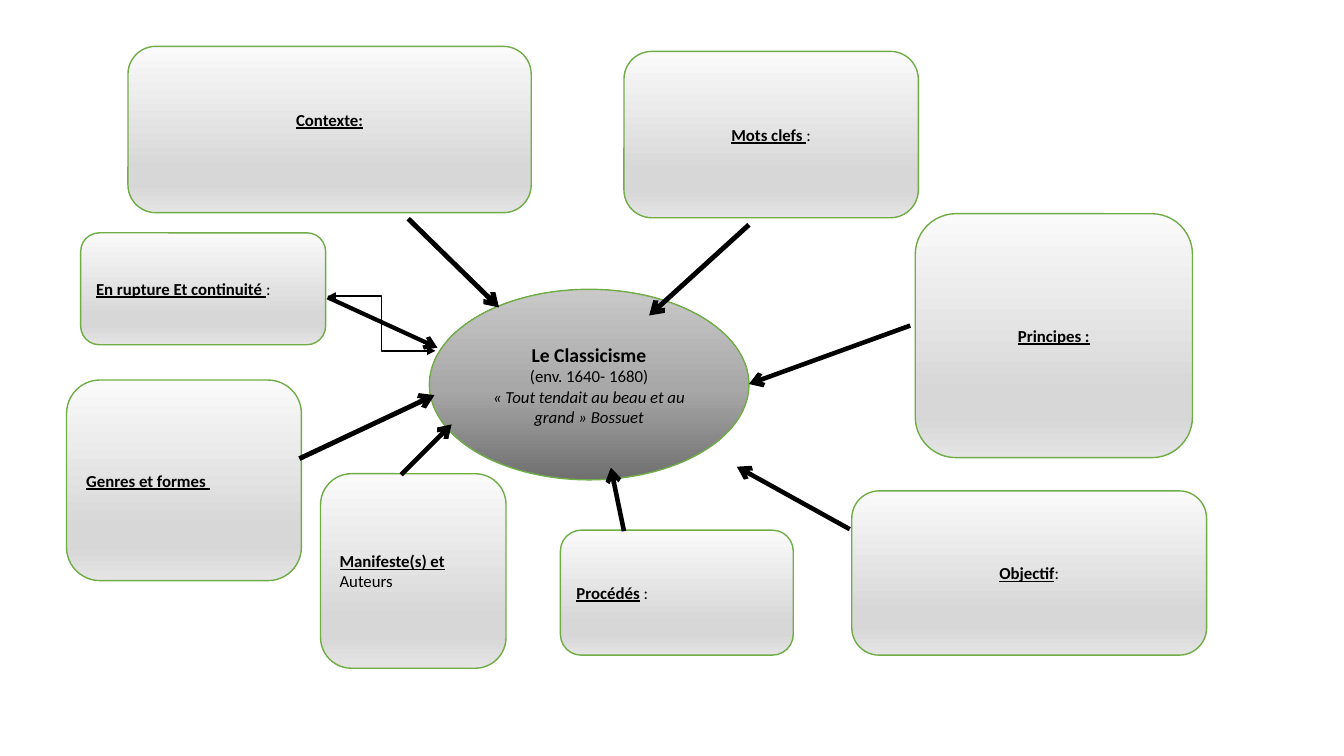
from dataclasses import dataclass

from lxml import etree
from pptx import Presentation
from pptx import util as u
from pptx.dml.color import RGBColor
from pptx.enum import shapes, text
from pptx.oxml.ns import qn


@dataclass(frozen=True)
class Theme:
    """Colours, type sizes and line widths of the slide."""
    font: str = "Calibri"
    ink: str = "000000"
    border: str = "70AD47"
    card: tuple = ((0, "FAFAFA"), (74, "D7D7D7"), (83, "D7D7D7"), (100, "E4E4E4"))
    hub: tuple = ((0, "6F6F6F"), (48, "A8A8A8"), (100, "C9C9C9"))
    title: int = 14
    body: int = 12
    border_width: int = 1


THEME = Theme()
COLUMNS, ROWS = 133.33, 75
LEFT, CENTER = text.PP_ALIGN.LEFT, text.PP_ALIGN.CENTER

HUB = (42.6, 28.7, 31.7, 18.9)
CARDS = [
    ((8, 23.1, 24.3, 11.1), LEFT, "En rupture Et continuité ", ":"),
    ((6.6, 37.7, 23.3, 19.9), LEFT, "Genres et formes ", ""),
    ((55.6, 52.6, 23.1, 12.4), LEFT, "Procédés", " :"),
    ((90.8, 21.2, 27.5, 24.2), CENTER, "Principes :", ""),
    ((12.7, 4.6, 40, 16.5), CENTER, "Contexte:", ""),
    ((61.9, 5.1, 29.2, 16.5), CENTER, "Mots clefs ", ":"),
    ((31.8, 47, 18.4, 19.3), LEFT, "Manifeste(s) et ", "Auteurs"),
    ((84.5, 48.7, 35.2, 16.3), CENTER, "Objectif", ":"),
]
RAISED_CARD, RAISED_INSET = "Contexte:", 0.25
ARROWS = [
    ((40.5, 21.7), (49.5, 30.5), 3.5),
    ((74.3, 22.3), (64.4, 31.3), 3.5),
    ((90.3, 32.3), (74.3, 38.1), 3.25),
    ((32.5, 29.5), (43.4, 34.5), 3),
    ((29.7, 45.5), (43.1, 39.2), 3.5),
    ((84.3, 52.5), (73.1, 46.3), 3.25),
    ((39.8, 47.1), (44.8, 42.1), 3.25),
    ((61.9, 52.7), (60.6, 46.4), 3.25),
]
ELBOW = ((32.5, 29.4), (43.2, 34.8), 1.25)


def place(area, column, row):
    """Turn a grid point into a position within the area."""
    left, top, width, height = area
    return left + round(width * column / COLUMNS), top + round(height * row / ROWS)


def add_node(page, area, kind, cell, stops, angle):
    """Add a gradient shape on a grid cell and return its text frame."""
    column, row, columns, rows = cell
    left, top = place(area, column, row)
    right, bottom = place(area, column + columns, row + rows)
    node = page.shapes.add_shape(kind, left, top, right - left, bottom - top)
    node.shadow.inherit = False
    node.line.color.rgb = RGBColor.from_string(THEME.border)
    node.line.width = u.Pt(THEME.border_width)
    node.fill.gradient()
    node.fill.gradient_angle = angle
    stop_list = node._element.spPr.find(qn("a:gradFill")).find(qn("a:gsLst"))
    for old_stop in list(stop_list):
        stop_list.remove(old_stop)
    for position, colour in stops:
        stop = etree.SubElement(stop_list, qn("a:gs"), pos=str(position * 1000))
        etree.SubElement(stop, qn("a:srgbClr"), val=colour)
    frame = node.text_frame
    frame.word_wrap = True
    frame.vertical_anchor = text.MSO_ANCHOR.MIDDLE
    return frame


def add_span(para, words, size, bold=False, italic=False, underline=False):
    """Append a formatted run to a paragraph."""
    span = para.add_run()
    span.text = words
    font = span.font
    font.name, font.size = THEME.font, u.Pt(size)
    font.bold, font.italic, font.underline = bold, italic, underline
    font.color.rgb = RGBColor.from_string(THEME.ink)


def draw_hub(page, area):
    """Draw the central ellipse with the movement, its dates and a quotation."""
    frame = add_node(page, area, shapes.MSO_SHAPE.OVAL, HUB, THEME.hub, 90)
    lines = [
        ("Le Classicisme", THEME.title, True, False),
        ("(env. 1640- 1680)", THEME.body, False, False),
        ("« Tout tendait au beau et au grand » Bossuet", THEME.body, False, True),
    ]
    for index, line in enumerate(lines):
        para = frame.add_paragraph() if index else frame.paragraphs[0]
        para.alignment = CENTER
        add_span(para, *line)


def draw_cards(page, area):
    """Draw the rounded cards with their underlined headings."""
    for cell, alignment, heading, rest in CARDS:
        frame = add_node(page, area, shapes.MSO_SHAPE.ROUNDED_RECTANGLE, cell, THEME.card, 270)
        if heading == RAISED_CARD:
            frame.margin_bottom = u.Inches(RAISED_INSET)
        para = frame.paragraphs[0]
        para.alignment = alignment
        add_span(para, heading, THEME.body, bold=True, underline=True)
        if rest:
            add_span(para, rest, THEME.body)


def add_link(page, area, kind, link, **ends):
    """Add a connector between two grid points with the given arrowheads."""
    start, end, width = link
    connector = page.shapes.add_connector(kind, *place(area, *start), *place(area, *end))
    connector.line.color.rgb = RGBColor.from_string(THEME.ink)
    connector.line.width = u.Pt(width)
    outline = connector.line._get_or_add_ln()
    for end_name, head in ends.items():
        etree.SubElement(outline, qn(f"a:{end_name}"), type=head)
    etree.SubElement(connector._element.spPr, qn("a:effectLst"))


def draw_links(page, area):
    """Draw the arrows to the hub and the double-ended elbow."""
    for arrow in ARROWS:
        add_link(page, area, shapes.MSO_CONNECTOR.STRAIGHT, arrow, tailEnd="arrow")
    add_link(page, area, shapes.MSO_CONNECTOR.ELBOW, ELBOW, headEnd="triangle", tailEnd="triangle")


def main():
    """Build the mind map slide and save it."""
    deck = Presentation()
    deck.slide_width, deck.slide_height = u.Inches(13.33), u.Inches(7.5)
    page = deck.slides.add_slide(deck.slide_layouts[6])
    area = (0, 0, deck.slide_width, deck.slide_height)
    draw_hub(page, area)
    draw_cards(page, area)
    draw_links(page, area)
    deck.save("out.pptx")


if __name__ == "__main__":
    main()
